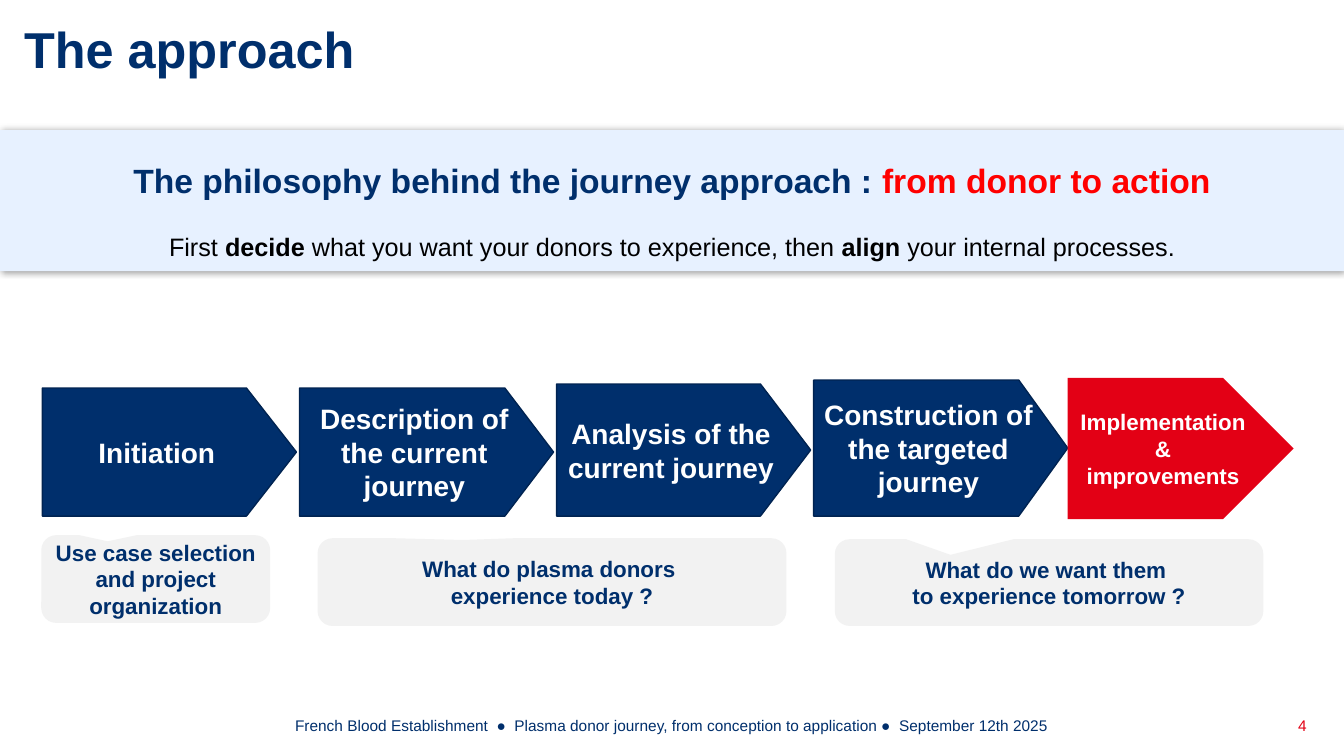
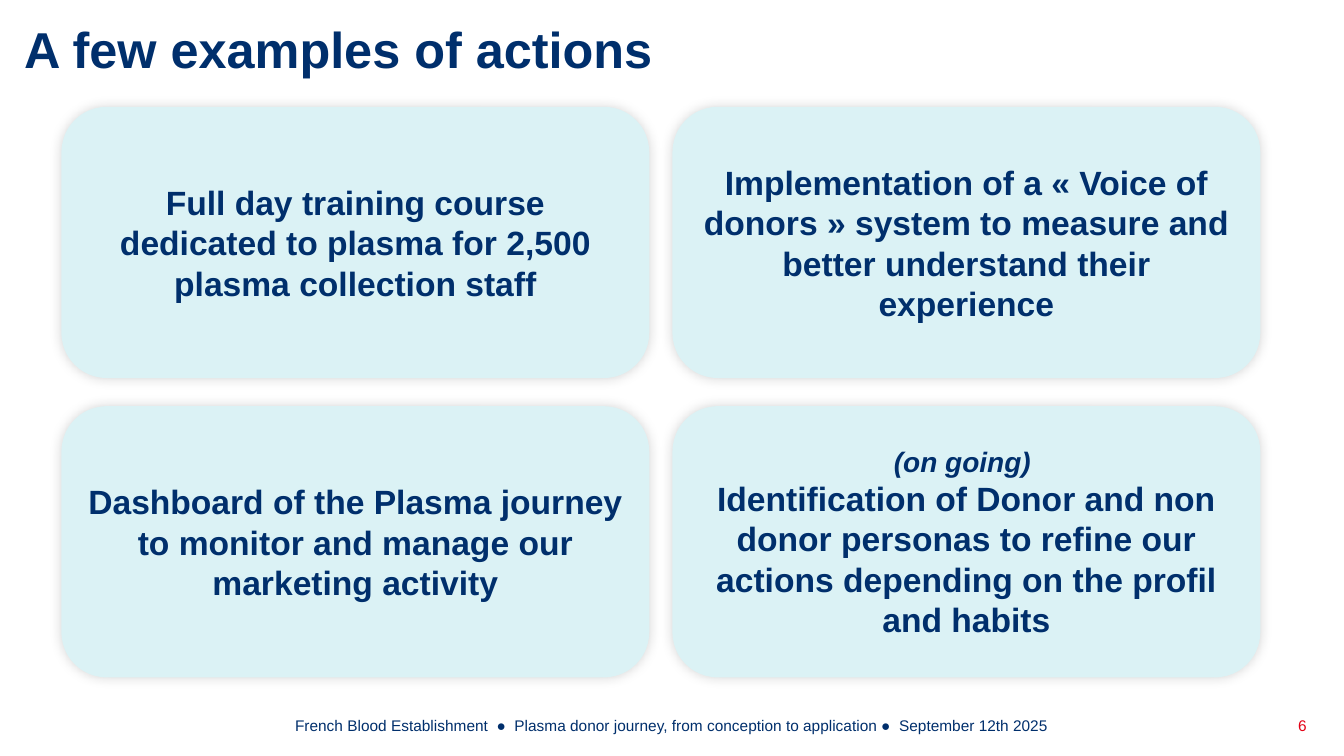
from lxml.etree import SubElement
from pptx import Presentation
from pptx.dml.color import RGBColor as RGB
from pptx.enum.shapes import MSO_SHAPE as Kind
from pptx.enum.text import MSO_ANCHOR as Anchor, PP_ALIGN as Align
from pptx.oxml.ns import qn
from pptx.util import Inches, Pt

HUES = {
    "navy": "002F6C", "edge": "002351", "red": "E30015", "bright": "FF0000",
    "white": "FFFFFF", "black": "000000", "band": "E7F1FF", "grey": "F2F2F2",
    "card": "DBF2F5",
}
FOOT = ("French Blood Establishment  ●  Plasma donor journey, from conception "
        "to application ●  September 12th 2025")


def write(shape, text, size=16, color="navy", bold=True, align=Align.CENTER,
          pad=(0.1, 0.05), lead=None, after=None):
    """Text is a string or a list of paragraphs; a paragraph is a string or
    a list of (words, format) runs."""
    frame = shape.text_frame
    frame.word_wrap = True
    frame.vertical_anchor = Anchor.MIDDLE
    frame.margin_left = frame.margin_right = Inches(pad[0])
    frame.margin_top = frame.margin_bottom = Inches(pad[1])
    paras = [text] if isinstance(text, str) else text
    for i, runs in enumerate(paras):
        para = frame.add_paragraph() if i else frame.paragraphs[0]
        para.alignment = align
        if lead:
            para.line_spacing = lead
        if after and i < len(paras) - 1:
            para.space_after = Pt(after)
        for words, style in [(runs, {})] if isinstance(runs, str) else runs:
            run = para.add_run()
            run.text = words
            font = run.font
            font.name = "Arial"
            font.size = Pt(style.get("size", size))
            font.bold = style.get("bold", bold)
            font.italic = style.get("italic", False)
            font.color.rgb = RGB.from_string(HUES[style.get("color", color)])


def draw(slide, kind, box, fill, line=None, adj=(), glow=None):
    """Add a filled shape; glow is the (opacity %, blur in points) of its shadow."""
    shape = slide.shapes.add_shape(kind, *map(Inches, box))
    shape.shadow.inherit = False
    shape.fill.solid()
    shape.fill.fore_color.rgb = RGB.from_string(HUES[fill])
    if line:
        shape.line.color.rgb = RGB.from_string(HUES[line])
        shape.line.width = Pt(1)
    else:
        shape.line.fill.background()
    for i, value in enumerate(adj):
        shape.adjustments[i] = value
    if glow:
        effects = shape._element.spPr.find(qn("a:effectLst"))
        shade = SubElement(effects, qn("a:outerShdw"), blurRad=str(Pt(glow[1])),
                           dist="0", dir="0", algn="ctr", rotWithShape="0")
        hue = SubElement(shade, qn("a:srgbClr"), val=HUES["black"])
        SubElement(hue, qn("a:alpha"), val=str(glow[0] * 1000))
    return shape


deck = Presentation()
deck.slide_width, deck.slide_height = Inches(13.33), Inches(7.5)

# Title, footer and page number of each slide
slides = []
for title, page in (("The approach", "4"), ("A few examples of actions", "6")):
    slide = deck.slides.add_slide(deck.slide_layouts[6])
    slides.append(slide)
    for box, text, style in (
        ((0.2, 0.17, 10.83, 0.61), title, dict(size=36, align=Align.LEFT)),
        ((1.94, 7.1, 9.45, 0.19), FOOT, dict(size=11, bold=False)),
        ((12.61, 7.1, 0.39, 0.19), page,
         dict(size=11, bold=False, color="red", align=Align.RIGHT)),
    ):
        write(slide.shapes.add_textbox(*map(Inches, box)), text,
              pad=(0.04, 0), **style)
plan, acts = slides

# Philosophy band
band = draw(plan, Kind.RECTANGLE, (0, 1.29, 13.33, 1.4), "band", glow=(40, 5))
lean = dict(size=18, color="black", bold=False)
firm = dict(lean, bold=True)
write(band, [
    [("The philosophy behind the journey approach : ", {}),
     ("from donor to action", dict(color="bright"))],
    [("First ", lean), ("decide ", firm),
     ("what you want your donors to experience, then ", lean),
     ("align ", firm), ("your internal processes.", lean)],
], size=24, lead=1.5, after=12)

# Journey steps: equal pitch, common base line
BASE = 5.12
for i, (text, top, tip) in enumerate((
    ("Initiation", 3.85, 0.39),
    ("Description of the current journey", 3.85, 0.38),
    ("Analysis of the current journey", 3.81, 0.38),
    ("Construction of the targeted journey", 3.77, 0.36),
)):
    step = draw(plan, Kind.PENTAGON, (0.42 + 2.55 * i, top, 2.52, BASE - top),
                "navy", line="edge", adj=[tip])
    write(step, text, size=20, color="white")
last = draw(plan, Kind.PENTAGON, (10.59, 3.75, 2.24, 1.4), "red", adj=[0.5])
write(last, "Implementation & improvements", color="white")

# Callouts below the steps
for box, tip, side, text in (
    ((0.41, 5.31, 2.27, 0.87), (-0.21, -0.43), 0.04,
     "Use case selection and project organization"),
    ((3.15, 5.34, 4.65, 0.87), (-0.19, -0.48), 0.08,
     ["What do plasma donors ", "experience today ?"]),
    ((8.28, 5.35, 4.25, 0.86), (-0.23, -0.32), 0.04,
     ["What do we want them ", "to experience tomorrow ?"]),
):
    note = draw(plan, Kind.ROUNDED_RECTANGULAR_CALLOUT, box, "grey",
                adj=(*tip, 0.17))
    write(note, text, pad=(side, 0.05))

# Action cards in a two by two grid
for i, text in enumerate((
    "Full day training course dedicated to plasma for 2,500 plasma collection staff",
    "Implementation of a « Voice of donors » system to measure and better "
    "understand their experience",
    "Dashboard of the Plasma journey to monitor and manage our marketing activity",
    [[("(on going) ", dict(size=20, italic=True))],
     "Identification of Donor and non donor personas to refine our actions "
     "depending on the profil and habits"],
)):
    row, col = divmod(i, 2)
    card = draw(acts, Kind.ROUNDED_RECTANGLE,
                (0.61 + 6.06 * col, 1.06 + 2.97 * row, 5.83, 2.69),
                "card", glow=(17, 9))
    write(card, text, size=24)

deck.save("out.pptx")
